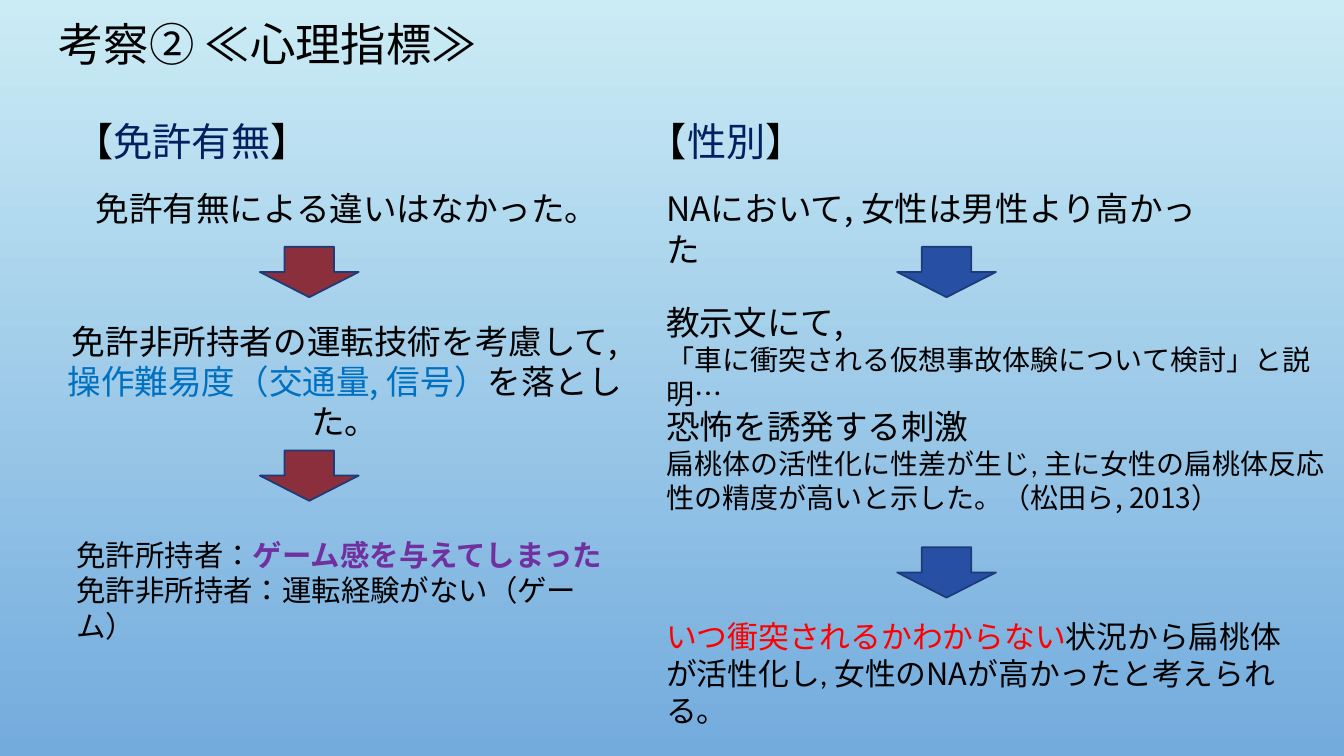
import pptx
import pptx.util
import pptx.dml.color
import pptx.enum.dml
import pptx.enum.lang
import pptx.enum.shapes
import pptx.enum.text
import pptx.oxml.ns
from lxml import etree
from pptx.util import Cm, Pt

THEME = {
    "sky": ("CBECF5", "73ABDD"),
    "ink": "000000", "navy": "002060", "blue": "0070C0",
    "purple": "7030A0", "red": "FF0000",
    "license_arrow": "8B2F3D", "gender_arrow": "274FA4", "arrow_line": "1D3A79",
    "title": 32.4, "heading": 28, "large": 24, "conclusion": 22, "detail": 21, "small": 20,
    "gothic": "Noto Sans CJK JP", "latin": "Calibri", "title_font": "Arial",
}

TITLE = ((1.22, 0.23, 11.81, 1.9), "考察② ≪心理指標≫")

RIGHT = 16.54
TEXTS = [
    ((1.63, 2.84, 7.06, 1.45), "left", [
        ("heading", [("【",), ("免許有無", "navy"), ("】",)])]),
    ((16.08, 2.82, 7.06, 1.45), "left", [
        ("heading", [("【",), ("性別", "navy"), ("】",)])]),
    ((2.16, 4.62, 12.4, 1.27), "left", [
        ("large", [("免許有無による違いはなかった。",)])]),
    ((1.35, 7.95, 14.68, 2.31), "center", [
        ("large", [("免許非所持者の運転技術を考慮して, ",),
                   ("操作難易度（交通量, 信号）", "blue"), ("を落とした。",)])]),
    ((1.68, 13.41, 14.05, 2.06), "left", [
        ("detail", [("免許所持者：",), ("ゲーム感を与えてしまった", "purple", "gothic", True)]),
        ("detail", [("免許非所持者：運転経験がない（ゲーム）",)])]),
    ((RIGHT, 4.62, 14.45, 1.27), "left", [
        ("large", [("NAにおいて, 女性は男性より高かった",)])]),
    ((RIGHT, 7.49, 17.12, 2.13), "left", [
        ("large", [("教示文にて,",)]),
        ("small", [("「車に衝突される仮想事故体験について検討」と説明…",)])]),
    ((RIGHT, 10.11, 17.12, 3.07), "left", [
        ("large", [("恐怖を誘発する刺激", "ink", "latin")]),
        ("small", [("扁桃体の活性化に性差が生じ, 主に女性の扁桃体反応性の精度が高いと示した。", "ink", "latin"),
                   ("（松田ら, 2013）",)])]),
    ((RIGHT, 15.44, 16.48, 2.13), "left", [
        ("conclusion", [("いつ衝突されるかわからない", "red"), ("状況から",),
                        ("扁桃体が活性化し, ", "ink", "latin"),
                        ("女性のNAが高かったと考えられる。",)])]),
]

ARROW_SIZE = (2.49, 1.27)
ARROWS = [
    ("license_arrow", 6.55, (6.22, 11.35)),
    ("gender_arrow", 22.61, (6.22, 13.79)),
]


def rgb(key):
    return pptx.dml.color.RGBColor.from_string(THEME[key])


def add_run(p, size, text, color="ink", font="gothic", bold=False):
    r = p.add_run()
    r.text = text
    formats = {"size": Pt(THEME[size]), "name": THEME[font], "bold": bold,
               "language_id": pptx.enum.lang.MSO_LANGUAGE_ID.JAPANESE}
    for name, value in formats.items():
        setattr(r.font, name, value)
    r.font.color.rgb = rgb(color)
    latin = r.font._element.find(pptx.oxml.ns.qn("a:latin"))
    ea = etree.Element(pptx.oxml.ns.qn("a:ea"), typeface=THEME["gothic"])
    latin.addnext(ea)


def paint_background(s):
    fill = s.background.fill
    fill.gradient()
    fill.gradient_angle = 270
    for stop, position, color in zip(fill.gradient_stops, (0, 1), THEME["sky"]):
        stop.position = position
        stop.color.rgb = pptx.dml.color.RGBColor.from_string(color)


def add_title(s):
    box, text = TITLE
    sp = s.shapes.title
    for name, value in zip(("left", "top", "width", "height"), box):
        setattr(sp, name, Cm(value))
    tf = sp.text_frame
    formats = {"word_wrap": True,
               "auto_size": pptx.enum.text.MSO_AUTO_SIZE.NONE,
               "vertical_anchor": pptx.enum.text.MSO_ANCHOR.MIDDLE}
    for name, value in formats.items():
        setattr(tf, name, value)
    p = tf.paragraphs[0]
    p.alignment = pptx.enum.text.PP_ALIGN.LEFT
    p.line_spacing = 0.9
    add_run(p, "title", text, font="title_font")


def add_text(s, box, align, paragraphs):
    tf = s.shapes.add_textbox(*map(Cm, box)).text_frame
    tf.word_wrap = True
    tf.auto_size = pptx.enum.text.MSO_AUTO_SIZE.SHAPE_TO_FIT_TEXT
    for i, (size, runs) in enumerate(paragraphs):
        p = tf.add_paragraph() if i else tf.paragraphs[0]
        p.alignment = getattr(pptx.enum.text.PP_ALIGN, align.upper())
        for run in runs:
            add_run(p, size, *run)


def add_arrow(s, color, left, top):
    sp = s.shapes.add_shape(pptx.enum.shapes.MSO_SHAPE.DOWN_ARROW,
                            *map(Cm, (left, top, *ARROW_SIZE)))
    sp.shadow.inherit = False
    sp.fill.solid()
    sp.fill.fore_color.rgb = rgb(color)
    sp.line.color.rgb = rgb("arrow_line")
    sp.line.width = Pt(1.25)


def main():
    prs = pptx.Presentation()
    prs.slide_width, prs.slide_height = Cm(33.87), Cm(19.05)
    s = prs.slides.add_slide(prs.slide_layouts[5])
    paint_background(s)
    add_title(s)
    for text in TEXTS:
        add_text(s, *text)
    for color, left, tops in ARROWS:
        for top in tops:
            add_arrow(s, color, left, top)
    prs.save("out.pptx")


if __name__ == "__main__":
    main()
